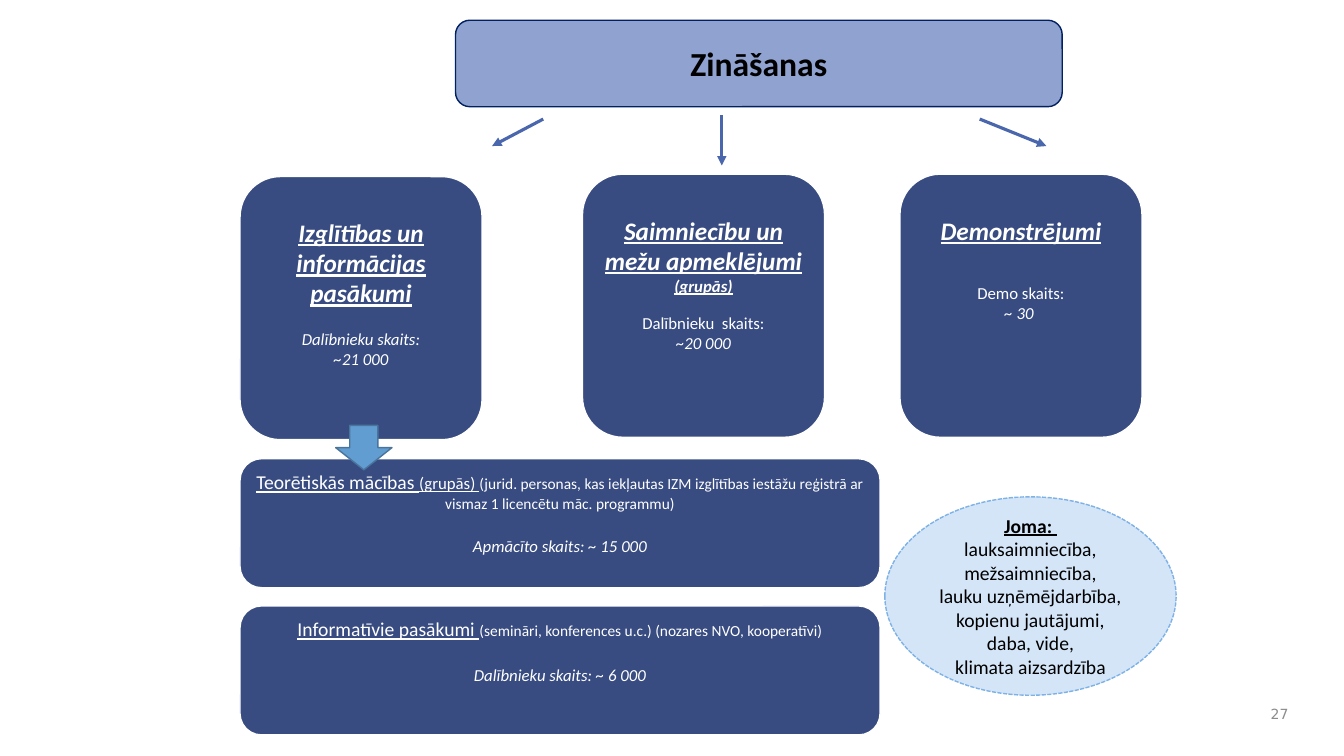
from pptx import Presentation
from pptx.dml.color import RGBColor
from pptx.enum.dml import MSO_LINE
from pptx.enum.shapes import MSO_CONNECTOR, MSO_SHAPE as Preset
from pptx.enum.text import MSO_ANCHOR as Anchor, PP_ALIGN as Align
from pptx.oxml.ns import qn
from pptx.util import Cm, Pt
from lxml.etree import SubElement

WHITE = RGBColor(0xFF, 0xFF, 0xFF)
BLACK = RGBColor(0, 0, 0)
GRAY = RGBColor(0x8C, 0x8C, 0x8C)
NAVY = RGBColor(0x38, 0x4C, 0x81)
DARK_NAVY = RGBColor(0x00, 0x20, 0x60)
ARROW_BLUE = RGBColor(0x4A, 0x66, 0xAC)
LAVENDER = RGBColor(0x90, 0xA2, 0xCF)
SKY = RGBColor(0x62, 0x9D, 0xD1)
STEEL = RGBColor(0x49, 0x74, 0x9B)
PALE = RGBColor(0xD4, 0xE5, 0xF7)
PALE_EDGE = RGBColor(0x7E, 0xB2, 0xE6)

HEADING = dict(size=18, bold=True, italic=True, underline=True)
CARD_TOP_MARGIN = 0.73


def add_box(page, preset, place, fill, edge, dash=None):
    box = page.shapes.add_shape(preset, *map(Cm, place))
    box.shadow.inherit = False
    box.fill.solid()
    box.fill.fore_color.rgb = fill
    box.line.color.rgb = edge
    box.line.width = Pt(1)
    if dash is not None:
        box.line.dash_style = dash
    return box


def set_frame(box, anchor=Anchor.TOP, side=0.2, top=0.13):
    frame = box.text_frame
    frame.word_wrap = True
    frame.vertical_anchor = anchor
    frame.margin_left = frame.margin_right = Cm(side)
    frame.margin_top = Cm(top)
    frame.margin_bottom = Cm(0.13)


def add_para(box, first=False, gap=0, align=Align.CENTER):
    frame = box.text_frame
    para = frame.paragraphs[0] if first else frame.add_paragraph()
    para.alignment = align
    para.space_before = Pt(gap)
    return para


def add_span(para, text, size=12, color=WHITE, font="Calibri",
             bold=False, italic=False, underline=False):
    span = para.add_run()
    span.text = text
    span.font.name = font
    span.font.size = Pt(size)
    span.font.color.rgb = color
    span.font.bold = bold
    span.font.italic = italic
    span.font.underline = underline


def add_arrow(page, start, end):
    arrow = page.shapes.add_connector(MSO_CONNECTOR.STRAIGHT, *map(Cm, start + end))
    arrow.line.color.rgb = ARROW_BLUE
    arrow.line.width = Pt(2.25)
    SubElement(arrow.line._get_or_add_ln(), qn("a:tailEnd"), type="triangle")
    SubElement(arrow._element.spPr, qn("a:effectLst"))


def add_card(page, left, top, title, label, count, gap, note="", italic_label=False):
    card = add_box(page, Preset.ROUNDED_RECTANGLE, (left, top, 6.1, 6.63), NAVY, WHITE)
    set_frame(card, top=CARD_TOP_MARGIN)
    heading = add_para(card, first=True)
    add_span(heading, title, **HEADING)
    if note:
        add_span(heading, " ", **{**HEADING, "size": 13})
        add_span(heading, note, **{**HEADING, "size": 12})
    add_span(add_para(card, gap=gap), label, italic=italic_label)
    add_span(add_para(card), count, italic=True)


def add_bar(page, top, title, details, count, group=""):
    bar = add_box(page, Preset.ROUNDED_RECTANGLE, (6.05, top, 16.13, 3.25), NAVY, WHITE)
    set_frame(bar)
    heading = add_para(bar, first=True)
    add_span(heading, title, size=14, underline=True)
    if group:
        add_span(heading, group, underline=True)
    add_span(heading, details, size=11)
    add_span(add_para(bar, gap=17), count, italic=True)


def add_header(page):
    header = add_box(page, Preset.ROUNDED_RECTANGLE, (11.48, 0.51, 15.29, 2.18),
                     LAVENDER, DARK_NAVY)
    set_frame(header, Anchor.MIDDLE)
    add_span(add_para(header, first=True), "Zināšanas", size=24, color=BLACK, bold=True)


def add_fields_oval(page):
    oval = add_box(page, Preset.OVAL, (22.3, 12.52, 7.34, 5), PALE, PALE_EDGE,
                   MSO_LINE.SQUARE_DOT)
    set_frame(oval, Anchor.MIDDLE, side=0.25)
    add_span(add_para(oval, first=True), "Joma: ", size=14, color=BLACK,
             bold=True, underline=True)
    for text in ("lauksaimniecība, mežsaimniecība,",
                 "lauku uzņēmējdarbība, kopienu jautājumi, daba, vide,",
                 "klimata aizsardzība"):
        add_span(add_para(oval), text, size=14, color=BLACK)


def add_page_number(page):
    box = page.shapes.add_textbox(Cm(31.6), Cm(17.58), Cm(1.12), Cm(0.84))
    set_frame(box, Anchor.MIDDLE, side=0.25)
    add_span(add_para(box, first=True, align=Align.RIGHT), "27", size=10,
             color=GRAY, font="DejaVu Sans")


def main():
    deck = Presentation()
    deck.slide_width, deck.slide_height = Cm(33.87), Cm(19.05)
    page = deck.slides.add_slide(deck.slide_layouts[6])

    add_page_number(page)
    add_header(page)
    for start, end in (((13.69, 3), (12.4, 3.68)),
                       ((18.19, 2.9), (18.19, 4.17)),
                       ((24.69, 3), (26.37, 3.68))):
        add_arrow(page, start, end)

    add_card(page, 6.05, 4.45, "Izglītības un informācijas pasākumi",
             "Dalībnieku skaits:", "~21 000", gap=14.6, italic_label=True)
    add_card(page, 14.68, 4.39, "Saimniecību un mežu apmeklējumi",
             "Dalībnieku  skaits:", "~20 000", gap=12.2, note="(grupās)")
    add_card(page, 22.68, 4.39, "Demonstrējumi", "Demo skaits:", "~ 30 ", gap=26.8)

    add_bar(page, 11.56, "Teorētiskās mācības ",
            "(jurid. personas, kas iekļautas IZM izglītības iestāžu reģistrā ar "
            "vismaz 1 licencētu māc. programmu)",
            "Apmācīto skaits: ~ 15 000", group="(grupās) ")
    add_bar(page, 15.27, "Informatīvie pasākumi ",
            "(semināri, konferences u.c.) (nozares NVO, kooperatīvi)",
            "Dalībnieku skaits: ~ 6 000")
    add_box(page, Preset.DOWN_ARROW, (8.46, 10.72, 1.42, 1.12), SKY, STEEL)
    add_fields_oval(page)
    deck.save("out.pptx")


if __name__ == "__main__":
    main()
